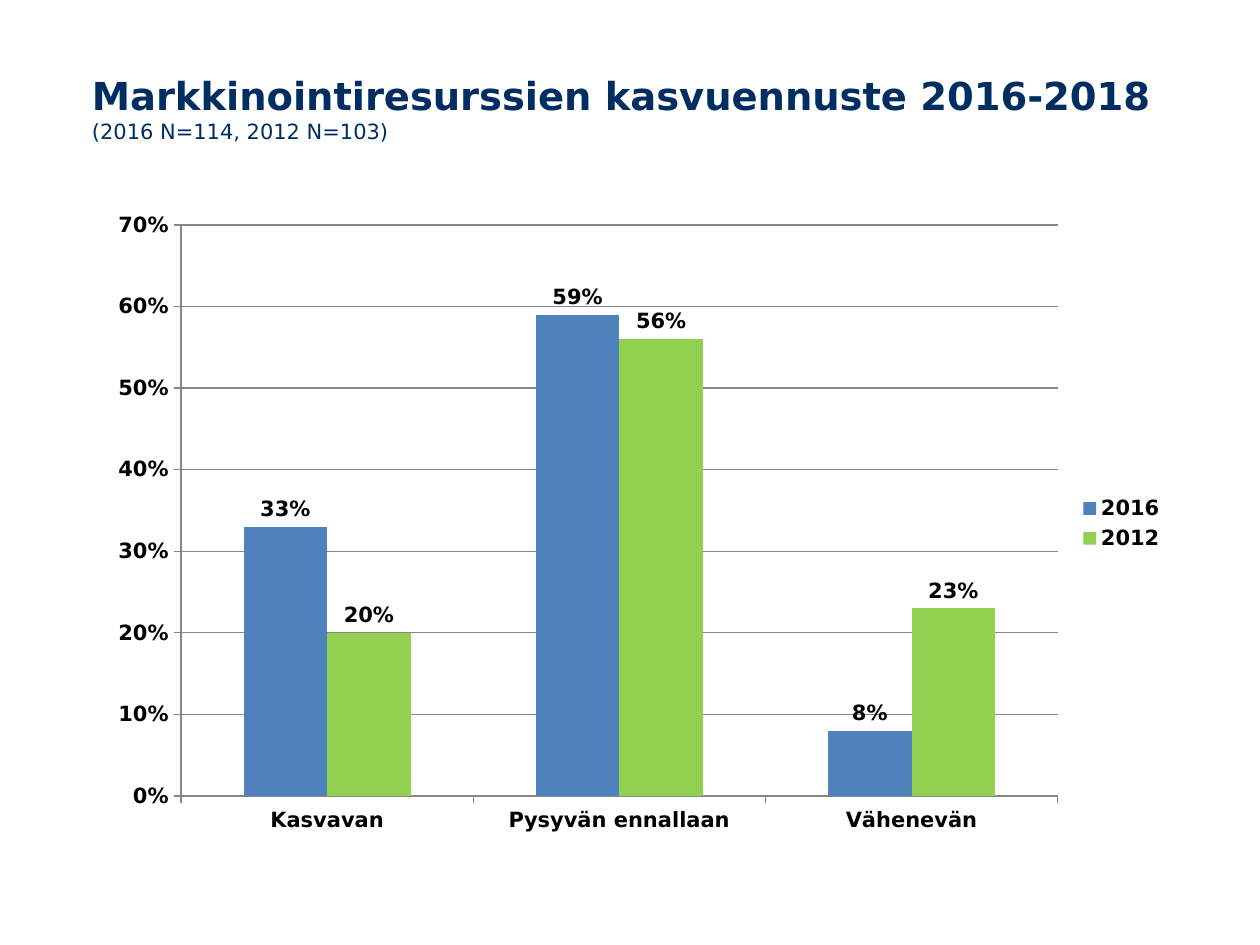
from dataclasses import dataclass
from typing import Any

import pptx
import pptx.chart.data
import pptx.dml.color
import pptx.enum.chart
import pptx.enum.text
import pptx.oxml
import pptx.oxml.ns
import pptx.util
from pptx.util import Inches

COLORS = {
    "navy": "002D62",
    "black": "000000",
    "gray": "878787",
    "blue": "4F81BD",
    "green": "92D050",
}
FONT = "DejaVu Sans"
CATEGORIES = ("Kasvavan", "Pysyvän ennallaan", "Vähenevän")
PLOT_AREA = {"x": 0.08, "y": 0.04, "w": 0.81, "h": 0.88}


@dataclass
class TitleLine:
    text: str
    size: float
    bold: bool


@dataclass
class YearSeries:
    name: str
    values: tuple[float, ...]
    color: str


TITLE_LINES = (
    TitleLine("Markkinointiresurssien kasvuennuste 2016-2018", 22, True),
    TitleLine("(2016 N=114, 2012 N=103)", 12, False),
)
YEARS = (
    YearSeries("2016", (0.33, 0.59, 0.08), "blue"),
    YearSeries("2012", (0.20, 0.56, 0.23), "green"),
)


def rgb(name: str) -> pptx.dml.color.RGBColor:
    return pptx.dml.color.RGBColor.from_string(COLORS[name])


def apply_format(target: Any, values: dict[str, Any]) -> None:
    for name, value in values.items():
        setattr(target, name, value)


def format_font(font: Any, size: float, bold: bool, color: str) -> None:
    apply_format(font, {"name": FONT, "size": pptx.util.Pt(size), "bold": bold})
    font.color.rgb = rgb(color)


def format_line(line: Any) -> None:
    line.color.rgb = rgb("gray")
    line.width = pptx.util.Pt(0.75)


def add_title(slide: Any) -> None:
    box = slide.shapes.add_textbox(Inches(0.73), Inches(0.1), Inches(8.53), Inches(1.04))
    frame = box.text_frame
    apply_format(frame, {
        "word_wrap": True,
        "vertical_anchor": pptx.enum.text.MSO_ANCHOR.BOTTOM,
        "margin_left": 0, "margin_top": 0, "margin_right": 0, "margin_bottom": 0,
    })
    for index, line in enumerate(TITLE_LINES):
        paragraph = frame.add_paragraph() if index else frame.paragraphs[0]
        run = paragraph.add_run()
        run.text = line.text
        format_font(run.font, line.size, line.bold, "navy")


def place_plot_area(chart: Any) -> None:
    """Fix the inner plot area at fractions of the chart's size."""
    plot_area = chart.plots[0]._element.getparent()
    for layout in plot_area.findall(pptx.oxml.ns.qn("c:layout")):
        plot_area.remove(layout)
    modes = "".join(f'<c:{axis}Mode val="edge"/>' for axis in "xy")
    sizes = "".join(f'<c:{name} val="{value}"/>' for name, value in PLOT_AREA.items())
    plot_area.insert(0, pptx.oxml.parse_xml(
        f'<c:layout {pptx.oxml.ns.nsdecls("c")}><c:manualLayout>'
        f'<c:layoutTarget val="inner"/>{modes}{sizes}</c:manualLayout></c:layout>'
    ))


def format_axes(chart: Any) -> None:
    tick_mark = pptx.enum.chart.XL_TICK_MARK
    for axis in (chart.category_axis, chart.value_axis):
        apply_format(axis, {
            "major_tick_mark": tick_mark.OUTSIDE, "minor_tick_mark": tick_mark.NONE,
        })
        format_line(axis.format.line)
    value_axis = chart.value_axis
    apply_format(value_axis, {
        "minimum_scale": 0, "maximum_scale": 0.7, "major_unit": 0.1,
        "has_major_gridlines": True,
    })
    apply_format(value_axis.tick_labels, {
        "number_format": "0%", "number_format_is_linked": False,
    })
    format_line(value_axis.major_gridlines.format.line)


def add_forecast_chart(slide: Any) -> None:
    data = pptx.chart.data.CategoryChartData(number_format="0%")
    data.categories = CATEGORIES
    for year in YEARS:
        data.add_series(year.name, year.values)
    chart = slide.shapes.add_chart(
        pptx.enum.chart.XL_CHART_TYPE.COLUMN_CLUSTERED,
        Inches(0.75), Inches(1.58), Inches(8.59), Inches(5.15), data,
    ).chart
    format_font(chart.font, 12, True, "black")
    apply_format(chart, {"has_title": False, "has_legend": True})
    apply_format(chart.legend, {
        "position": pptx.enum.chart.XL_LEGEND_POSITION.RIGHT, "include_in_layout": False,
    })
    plot = chart.plots[0]
    apply_format(plot, {"gap_width": 150, "overlap": 0, "vary_by_categories": False})
    for series, year in zip(plot.series, YEARS):
        series.format.fill.solid()
        series.format.fill.fore_color.rgb = rgb(year.color)
        apply_format(series.data_labels, {
            "show_value": True,
            "number_format": "0%",
            "number_format_is_linked": False,
            "position": pptx.enum.chart.XL_LABEL_POSITION.OUTSIDE_END,
        })
    format_axes(chart)
    place_plot_area(chart)


def main() -> None:
    presentation = pptx.Presentation()
    apply_format(presentation, {"slide_width": Inches(10), "slide_height": Inches(7.5)})
    slide = presentation.slides.add_slide(presentation.slide_layouts[6])
    add_title(slide)
    add_forecast_chart(slide)
    presentation.save("out.pptx")


if __name__ == "__main__":
    main()
